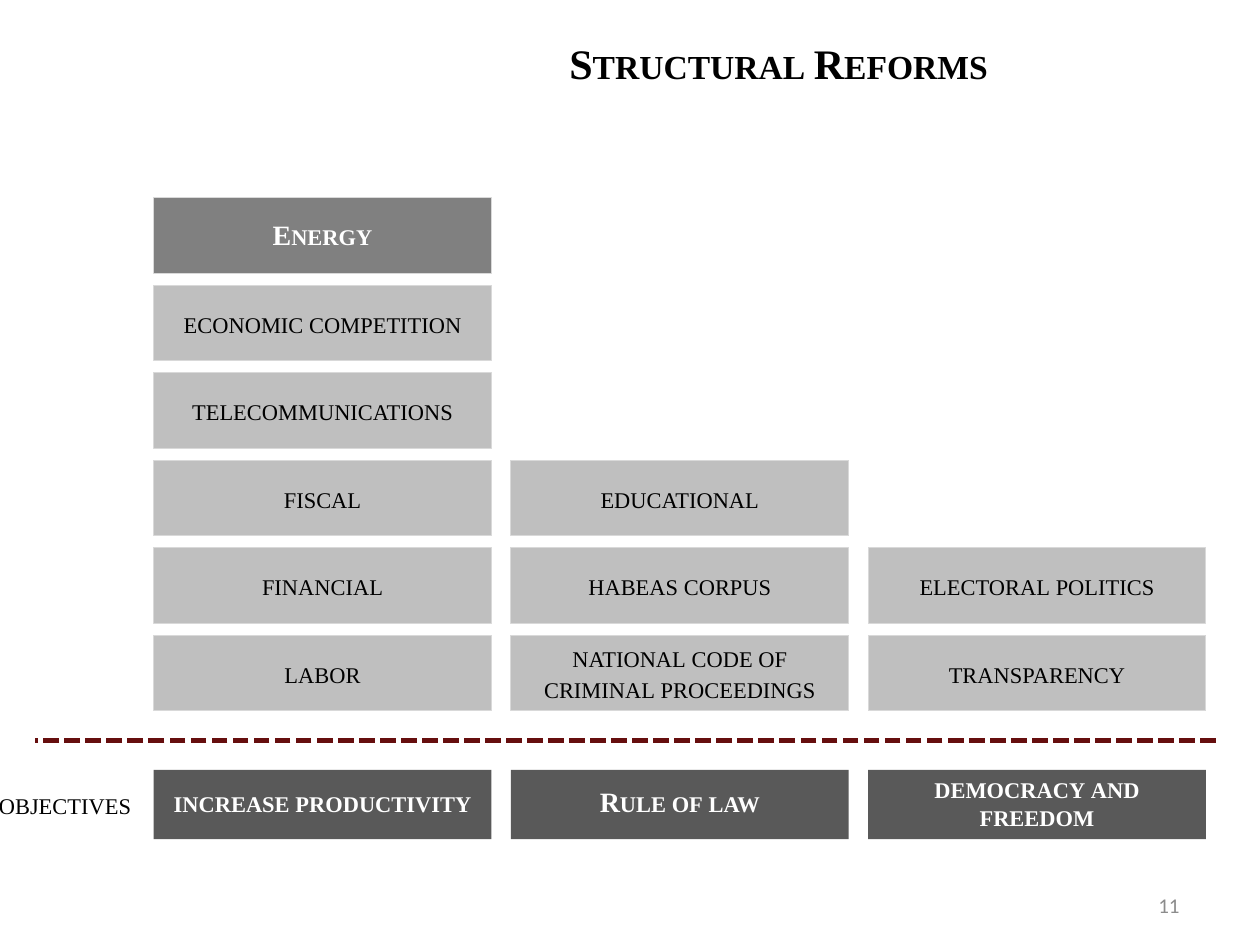
import dataclasses
import pptx
import pptx.util
import pptx.dml.color
import pptx.enum.dml
import pptx.enum.shapes
import pptx.enum.text
import pptx.oxml.ns
from lxml import etree

Inches, Pt = pptx.util.Inches, pptx.util.Pt
Align = pptx.enum.text.PP_ALIGN
Anchor = pptx.enum.text.MSO_ANCHOR


@dataclasses.dataclass(frozen=True)
class Theme:
    """Colours, fonts and sizes of the slide."""
    serif: str = "Times New Roman"
    sans: str = "Calibri"
    ink: str = "000000"
    white: str = "FFFFFF"
    faint: str = "8C8C8C"
    pale: str = "BFBFBF"
    mid: str = "808080"
    dark: str = "595959"
    edge: str = "D9D9D9"
    rule: str = "660E0E"
    head: int = 24
    body: int = 16
    small: int = 12


THEME = Theme()
PILLARS = [
    ("increase productivity", ["labor", "financial", "fiscal", "telecommunications",
                               "economic competition", "Energy"]),
    ("Rule of law", ["national code of criminal proceedings", "habeas corpus",
                     "educational"]),
    ("democracy and freedom", ["transparency", "electoral politics"]),
]


def tint(code):
    """Turn a hex code into a colour."""
    return pptx.dml.color.RGBColor.from_string(code)


def write(shape, text, size, color, bold=False, align=Align.CENTER,
          anchor=Anchor.MIDDLE, face=THEME.serif, caps=True, lead=None, wrap=True):
    """Set one styled paragraph in a shape."""
    frame = shape.text_frame
    frame.word_wrap, frame.vertical_anchor = wrap, anchor
    par = frame.paragraphs[0]
    par.text, par.alignment = text, align
    if lead:
        par.line_spacing = Pt(lead)
    font = par.font
    font.name, font.size, font.bold = face, Pt(size), bold
    font.color.rgb = tint(color)
    if caps:
        par._p.get_or_add_pPr().get_or_add_defRPr().set("cap", "small")


def label(slide, box, text, size, color, **style):
    """Add a text box in the given box."""
    write(slide.shapes.add_textbox(*map(Inches, box)), text, size, color, **style)


def block(slide, box, text, fill, color, bold, lead, edge=None):
    """Add a filled block with centred text."""
    rect = pptx.enum.shapes.MSO_SHAPE.RECTANGLE
    shape = slide.shapes.add_shape(rect, *map(Inches, box))
    shape.shadow.inherit = False
    shape.fill.solid()
    shape.fill.fore_color.rgb = tint(fill)
    if edge:
        shape.line.color.rgb = tint(edge)
        shape.line.width = Pt(0.5)
    else:
        shape.line.fill.background()
    write(shape, text, THEME.body, color, bold=bold, lead=lead)


def stack(slide, box, names, rows=6, gap=0.095):
    """Pile reform blocks up from the foot of the box."""
    left, top, width, height = box
    step = (height + gap) / rows
    for index, name in enumerate(names):
        spot = left, top + (rows - 1 - index) * step, width, step - gap
        key = name == "Energy"
        block(slide, spot, name, THEME.mid if key else THEME.pale,
              THEME.white if key else THEME.ink, key, 18, THEME.edge)


def chart(slide, box, foot, gap=0.155):
    """Set the pillars side by side above their aims."""
    left, top, width, height = box
    step = (width + gap) / len(PILLARS)
    for index, (aim, names) in enumerate(PILLARS):
        side = left + index * step
        stack(slide, (side, top, step - gap, height), names)
        block(slide, (side, foot[0], step - gap, foot[1]), aim,
              THEME.dark, THEME.white, True, 16)


def divide(slide, left, right, top):
    """Draw the dashed rule from right to left."""
    kind = pptx.enum.shapes.MSO_CONNECTOR.STRAIGHT
    rule = slide.shapes.add_connector(kind, *map(Inches, (right, top, left, top)))
    rule.line.color.rgb = tint(THEME.rule)
    rule.line.width = Pt(3)
    rule.line.dash_style = pptx.enum.dml.MSO_LINE.SQUARE_DOT
    etree.SubElement(rule._element.spPr, pptx.oxml.ns.qn("a:effectLst"))


def main():
    """Build and save the slide."""
    deck = pptx.Presentation()
    deck.slide_width, deck.slide_height = Inches(10), Inches(7.5)
    slide = deck.slides.add_slide(deck.slide_layouts[6])
    label(slide, (2.56, 0.25, 7.24, 0.5), "Structural Reforms", THEME.head,
          THEME.ink, bold=True, anchor=Anchor.TOP)
    chart(slide, (1.22, 1.57, 8.35, 4.07), foot=(6.11, 0.55))
    divide(slide, 0.28, 9.65, 5.88)
    label(slide, (-0.12, 6.19, 1.26, 0.37), "objectives", THEME.body, THEME.ink,
          align=Align.RIGHT, anchor=Anchor.TOP, wrap=False)
    label(slide, (7.13, 6.98, 2.33, 0.4), "11", THEME.small, THEME.faint,
          align=Align.RIGHT, face=THEME.sans, caps=False)
    deck.save("out.pptx")


if __name__ == "__main__":
    main()
